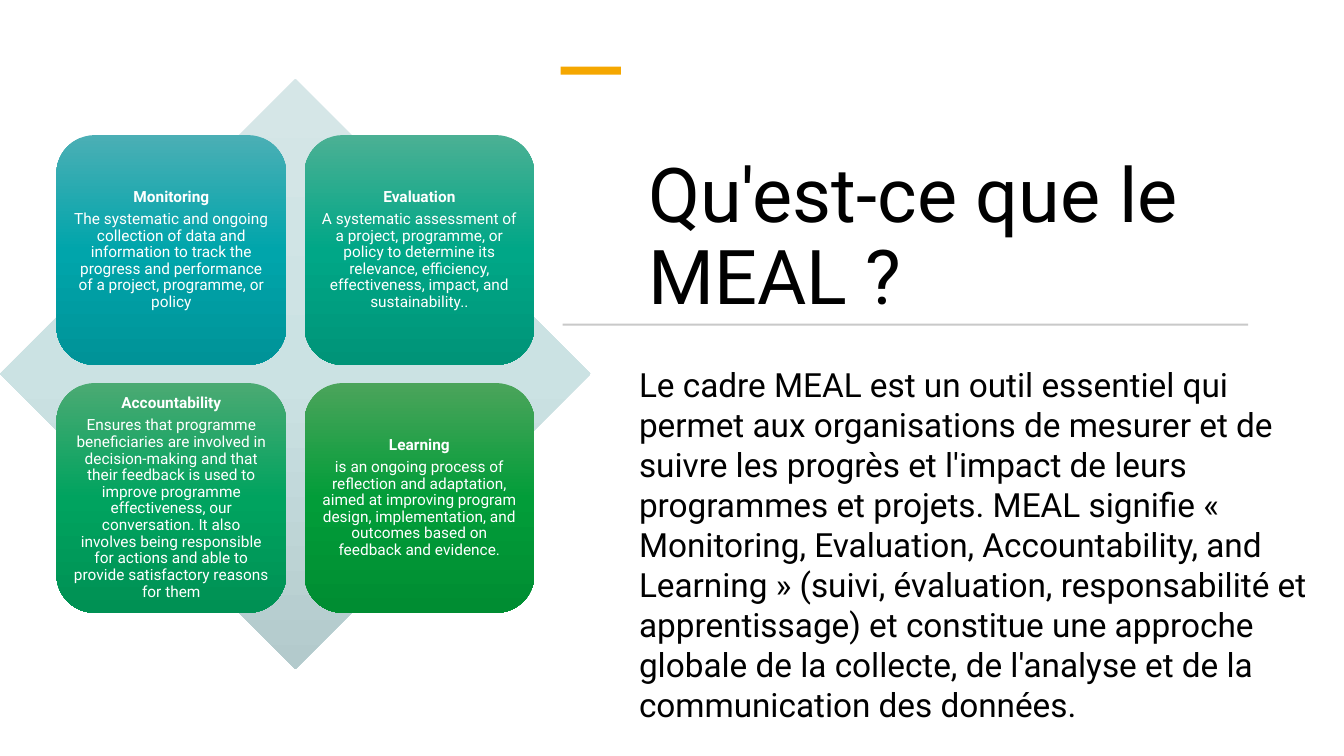
import copy

import pptx
import pptx.dml.color
import pptx.enum.shapes
import pptx.enum.text
import pptx.oxml.ns
import pptx.util

PX = 9144  # EMU per px, 100 px to the inch
FONT = "Roboto"
SHAPE = pptx.enum.shapes.MSO_SHAPE
ANCHOR = pptx.enum.text.MSO_ANCHOR
ALIGN = pptx.enum.text.PP_ALIGN

COLORS = {
    "text": "000000",
    "card_text": "FFFFFF",
    "accent": "F5A700",
    "rule": "C9C9C9",
    "diamond": ("D5E6E7", "CBE2E3", "B3CACC"),
    "Monitoring": ("4BAFB5", "00A5AB", "009398"),
    "Evaluation": ("4BB094", "00A787", "009478"),
    "Accountability": ("4BAA73", "00A35F", "009154"),
    "Learning": ("4BA45B", "029D39", "008D32"),
}

TITLE = "Qu'est-ce que le MEAL ?"
BODY = (
    "Le cadre MEAL est un outil essentiel qui permet aux organisations de "
    "mesurer et de suivre les progrès et l'impact de leurs programmes et "
    "projets. MEAL signifie « Monitoring, Evaluation, Accountability, and "
    "Learning » (suivi, évaluation, responsabilité et apprentissage) et "
    "constitue une approche globale de la collecte, de l'analyse et de la "
    "communication des données."
)
CARDS = {
    "Monitoring": "The systematic and ongoing collection of data and "
    "information to track the progress and performance of a project, "
    "programme, or policy",
    "Evaluation": "A systematic assessment of a project, programme, or policy "
    "to determine its relevance, efficiency, effectiveness, impact, and "
    "sustainability..",
    "Accountability": "Ensures that programme beneficiaries are involved in "
    "decision-making and that their feedback is used to improve programme "
    "effectiveness, our conversation. It also involves being responsible for "
    "actions and able to provide satisfactory reasons for them",
    "Learning": "is an ongoing process of reflection and adaptation, aimed at "
    "improving program design, implementation, and outcomes based on feedback "
    "and evidence.",
}


def px(*values):
    return [v * PX for v in values]


def rgb(name):
    return pptx.dml.color.RGBColor.from_string(name)


def set_all(obj, values):
    for name, value in values.items():
        setattr(obj, name, value)


def write(p, text, size, color, bold=False, **paragraph):
    set_all(p, paragraph)
    r = p.add_run()
    r.text = text
    set_all(r.font, {"name": FONT, "size": pptx.util.Pt(size), "bold": bold})
    r.font.color.rgb = rgb(COLORS[color])


def add_shape(s, kind, box, color):
    """Preset shape with a plain fill, or a three-stop vertical gradient."""
    sp = s.shapes.add_shape(kind, *px(*box))
    sp.shadow.inherit = False
    sp.line.fill.background()
    fill = COLORS[color]
    if isinstance(fill, str):
        sp.fill.solid()
        sp.fill.fore_color.rgb = rgb(fill)
        return sp
    sp.fill.gradient()
    sp.fill.gradient_angle = 270
    stops = sp._element.spPr.find(".//" + pptx.oxml.ns.qn("a:gsLst"))
    stops.append(copy.deepcopy(stops[-1]))
    for i, stop in enumerate(sp.fill.gradient_stops):
        stop.position = i / 2
        stop.color.rgb = rgb(fill[i])
    return sp


def add_text(s, box, text, size, anchor, **paragraph):
    tf = s.shapes.add_textbox(*px(*box)).text_frame
    set_all(tf, {"word_wrap": True, "vertical_anchor": anchor})
    write(tf.paragraphs[0], text, size, "text", **paragraph)


def add_card(s, box, name, text):
    tf = add_shape(s, SHAPE.ROUNDED_RECTANGLE, box, name).text_frame
    set_all(tf, {"word_wrap": True, "vertical_anchor": ANCHOR.MIDDLE})
    for side in ("left", "top", "right", "bottom"):
        setattr(tf, "margin_" + side, 5 * PX)
    fmt = {"alignment": ALIGN.CENTER, "line_spacing": 0.9,
           "space_after": pptx.util.Pt(3.85)}
    write(tf.paragraphs[0], name, 11, "card_text", bold=True, **fmt)
    write(tf.add_paragraph(), text, 11, "card_text", **fmt)


def main():
    prs = pptx.Presentation()
    prs.slide_width, prs.slide_height = px(1333, 750)
    s = prs.slides.add_slide(prs.slide_layouts[6])

    # Title, accent bar and rule
    add_text(s, (633, 155, 700, 168), TITLE, 54, ANCHOR.BOTTOM, line_spacing=0.9)
    add_shape(s, SHAPE.RECTANGLE, (556, 66, 60, 8), "accent")
    add_shape(s, SHAPE.RECTANGLE, (558, 321, 680, 2), "rule")

    # Body
    add_text(s, (624, 356, 686, 309), BODY, 23.8, ANCHOR.TOP)

    # Diamond with a two by two grid of cards
    add_shape(s, SHAPE.DIAMOND, (0, 78, 586, 586), "diamond")
    side, pitch = 228, 246
    for i, (name, text) in enumerate(CARDS.items()):
        row, col = divmod(i, 2)
        box = (56 + col * pitch, 134 + row * pitch, side, side)
        add_card(s, box, name, text)

    prs.save("out.pptx")


if __name__ == "__main__":
    main()
